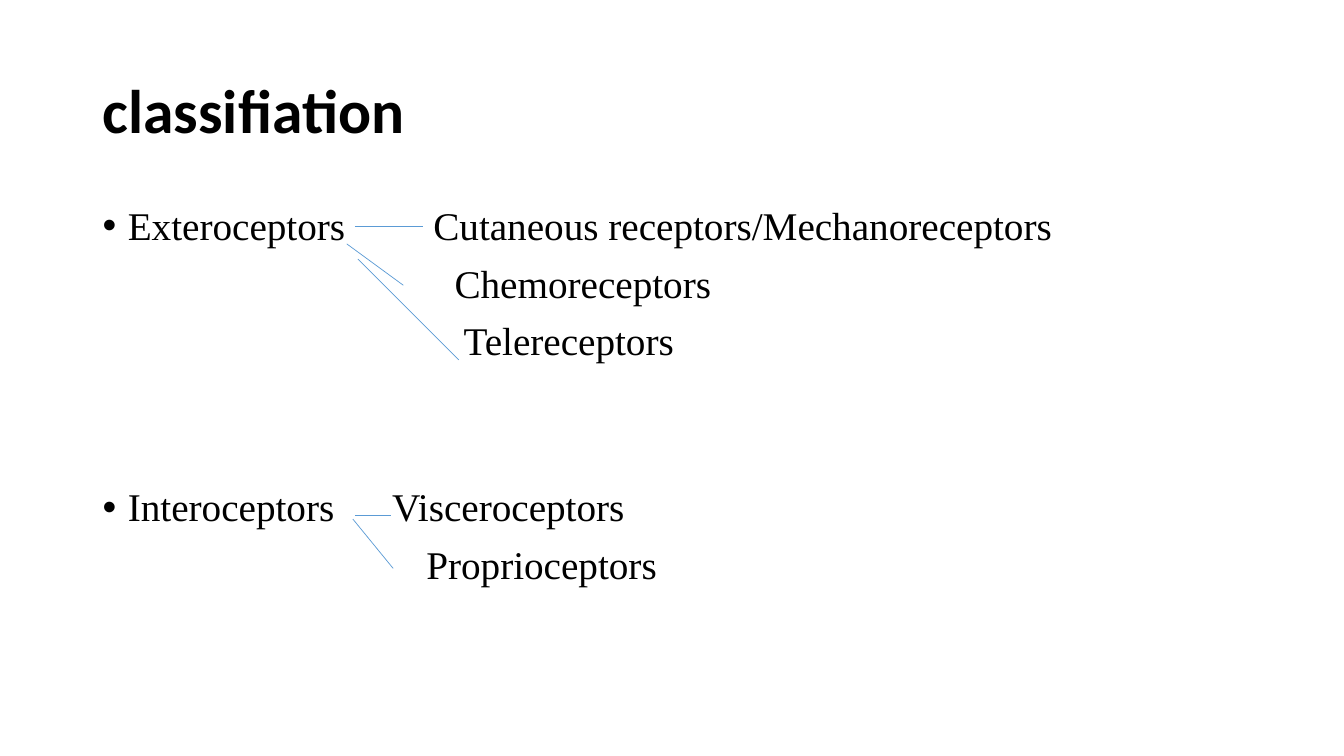
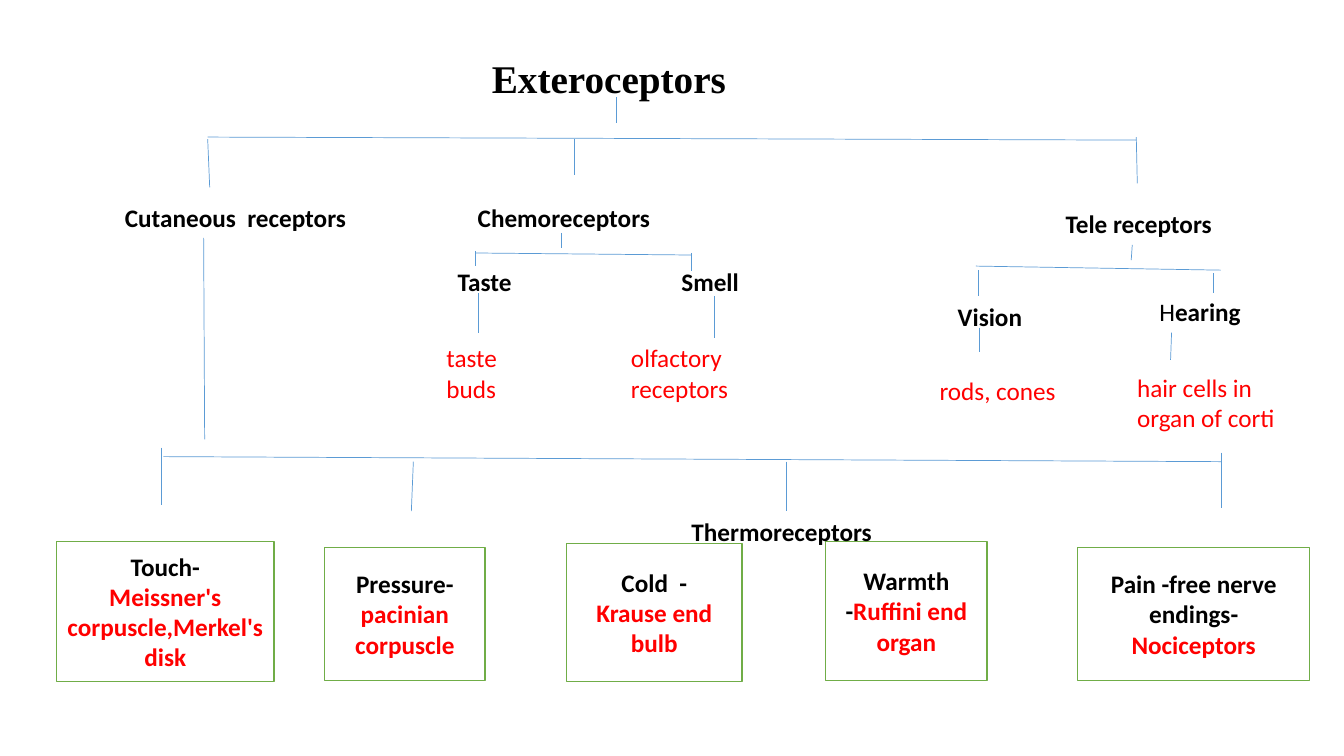
import pptx
import pptx.dml.color
import pptx.enum.shapes
import pptx.enum.text
import pptx.oxml.ns
import pptx.util
import lxml.etree

Inches = pptx.util.Inches
Pt = pptx.util.Pt
PP_ALIGN = pptx.enum.text.PP_ALIGN
ANCHOR = pptx.enum.text.MSO_ANCHOR

COLORS = {
    "text": "000000",
    "organ": "FF0000",
    "branch": "5B9BD5",
    "frame": "70AD47",
    "paper": "FFFFFF",
}
SANS, SERIF = "Calibri", "Times New Roman"
# font, size, bold, colour
STYLES = {
    "title": (SANS, 44, True, "text"),
    "heading": (SERIF, 28, True, "text"),
    "body": (SERIF, 28, False, "text"),
    "label": (SANS, 18, True, "text"),
    "light": (SANS, 18, False, "text"),
    "organ": (SANS, 18, False, "organ"),
    "strong organ": (SANS, 18, True, "organ"),
}


def rgb(color):
    return pptx.dml.color.RGBColor.from_string(COLORS[color])


def add_runs(paragraph, runs):
    """Append (text, style) runs."""
    for text, style in runs:
        run = paragraph.add_run()
        run.text = text
        font = run.font
        font.name, size, font.bold, color = STYLES[style]
        font.size = Pt(size)
        font.color.rgb = rgb(color)


def add_text(slide, left, top, width, height, runs, anchor=ANCHOR.TOP):
    """Place a wrapping text box and return its first paragraph."""
    frame = slide.shapes.add_textbox(
        Inches(left), Inches(top), Inches(width), Inches(height)).text_frame
    frame.word_wrap = True
    frame.vertical_anchor = anchor
    add_runs(frame.paragraphs[0], runs)
    return frame.paragraphs[0]


def indent(paragraph, margin, hanging=0, bullet=None):
    properties = paragraph._p.get_or_add_pPr()
    properties.set("marL", str(Inches(margin)))
    properties.set("indent", str(-Inches(hanging)))
    if bullet:
        for tag, key, value in (("a:buFont", "typeface", "Arial"),
                                ("a:buChar", "char", bullet)):
            lxml.etree.SubElement(
                properties, pptx.oxml.ns.qn(tag)).set(key, value)


def add_lines(slide, left, top, lines):
    """Draw (x1, y1, x2, y2) lines measured from left, top."""
    for x1, y1, x2, y2 in lines:
        line = slide.shapes.add_connector(
            pptx.enum.shapes.MSO_CONNECTOR.STRAIGHT,
            Inches(left + x1), Inches(top + y1),
            Inches(left + x2), Inches(top + y2))
        line.line.color.rgb = rgb("branch")
        line.line.width = Pt(0.5)
        lxml.etree.SubElement(line._element.spPr,
                              pptx.oxml.ns.qn("a:effectLst"))


def receptor_group(slide, left, top, name, kinds, lines):
    """A bulleted name, its kinds as (text, offset) and lines between them."""
    bullet = add_text(slide, left, top, 2.8, 0.6, [(name, "body")])
    indent(bullet, 0.25, 0.25, "•")
    bullet.line_spacing = 0.9

    kinds_left = 2.6
    first = add_text(slide, left + kinds_left, top, 11.5 - kinds_left,
                     0.56 * len(kinds) + 0.1, [])
    frame = first._parent
    for index, (kind, offset) in enumerate(kinds):
        paragraph = frame.add_paragraph() if index else first
        indent(paragraph, offset - kinds_left)
        paragraph.line_spacing = 0.9
        if index:
            paragraph.space_before = Pt(11)
        add_runs(paragraph, [(kind, "body")])
    add_lines(slide, left, top, lines)


def sense_branch(slide, left, top, labels, lines):
    """Labels as (x, y, width, height, runs) and lines, from left, top."""
    add_lines(slide, left, top, lines)
    for x, y, width, height, runs in labels:
        add_text(slide, left + x, top + y, width, height, runs)


def receptor_box(slide, left, top, width, height, paragraphs):
    box = slide.shapes.add_shape(
        pptx.enum.shapes.MSO_SHAPE.RECTANGLE,
        Inches(left), Inches(top), Inches(width), Inches(height))
    box.shadow.inherit = False
    box.fill.solid()
    box.fill.fore_color.rgb = rgb("paper")
    box.line.color.rgb = rgb("frame")
    box.line.width = Pt(1)
    frame = box.text_frame
    frame.word_wrap = True
    frame.vertical_anchor = ANCHOR.MIDDLE
    for index, runs in enumerate(paragraphs):
        paragraph = frame.add_paragraph() if index else frame.paragraphs[0]
        paragraph.alignment = PP_ALIGN.CENTER
        add_runs(paragraph, runs)


def classification_slide(slide):
    left = 0.92
    title = add_text(slide, left, 0.4, 11.5, 1.45,
                     [("classifiation", "title")], ANCHOR.MIDDLE)
    title.line_spacing = 0.9
    receptor_group(
        slide, left, 2, "Exteroceptors",
        [("Cutaneous receptors/Mechanoreceptors", 3.28),
         ("Chemoreceptors", 3.49), ("Telereceptors", 3.58)],
        [(2.6, 0.25, 2.98, 0.25), (2.86, 0.25, 3.28, 0.25),
         (2.52, 0.42, 3.08, 0.83), (2.63, 0.57, 3.63, 1.57)])
    receptor_group(
        slide, left, 4.79, "Interoceptors",
        [("Visceroceptors", 2.87), ("Proprioceptors", 3.21)],
        [(2.6, 0.32, 2.96, 0.32), (2.58, 0.36, 2.98, 0.85)])


def exteroceptors_slide(slide):
    heading = add_text(slide, 4.78, 0.54, 3, 0.56,
                       [("Exteroceptors", "heading")])
    heading.line_spacing = 0.9
    add_lines(slide, 2.06, 0.96, [
        (4.05, 0, 4.05, 0.26), (0, 0.4, 9.21, 0.43), (0, 0.42, 0.02, 0.9),
        (3.64, 0.42, 3.64, 0.78), (9.21, 0.4, 9.22, 0.86)])

    boxes = [
        (0.56, 5.37, 2.16, 1.39,
         [[("Touch-", "label")],
          [("Meissner's corpuscle,Merkel's disk", "strong organ")]]),
        (3.22, 5.43, 1.59, 1.32,
         [[("Pressure-", "label")], [("pacinian corpuscle", "strong organ")]]),
        (5.62, 5.39, 1.74, 1.37,
         [[("Cold  -", "label")], [("Krause end bulb", "strong organ")]]),
        (8.19, 5.37, 1.6, 1.38,
         [[("Warmth -", "label"), ("Ruffini end organ", "strong organ")]]),
        (10.69, 5.43, 2.3, 1.32,
         [[("Pain -free nerve endings- ", "label"),
           ("Nociceptors", "strong organ")]]),
    ]
    for box in boxes:
        receptor_box(slide, *box)

    branch_top = 1.9
    sense_branch(
        slide, 0.5, branch_top,
        [(0.64, 0.06, 2.78, 0.4, [("Cutaneous  receptors", "label")]),
         (6.26, 3.17, 2.92, 0.4, [("Thermoreceptors", "label")])],
        [(1.52, 0.46, 1.53, 2.46), (1.12, 2.63, 11.61, 2.68),
         (1.1, 2.54, 1.1, 3.11), (3.6, 2.68, 3.58, 3.17),
         (7.3, 2.68, 7.3, 3.17), (11.61, 2.59, 11.61, 3.14)])
    sense_branch(
        slide, 4.3, branch_top,
        [(0.34, 0.06, 2.8, 0.4, [("Chemoreceptors", "label")]),
         (0.14, 0.69, 1.8, 0.4, [("Taste", "label")]),
         (2.36, 0.69, 1.3, 0.4, [("Smell", "label")]),
         (0.03, 1.45, 1.21, 0.71, [("taste buds", "organ")]),
         (1.86, 1.45, 1.72, 0.71, [("olfactory receptors", "organ")])],
        [(1.27, 0.41, 1.27, 0.56), (0.42, 0.61, 2.56, 0.63),
         (0.41, 0.59, 0.41, 0.74), (2.56, 0.61, 2.56, 0.79),
         (0.44, 1.01, 0.44, 1.4), (2.79, 1.04, 2.79, 1.45)])
    sense_branch(
        slide, 9.2, branch_top,
        [(1.27, 0.12, 2, 0.4, [("Tele receptors", "label")]),
         (0.2, 1.04, 1.29, 0.4, [("Vision", "label")]),
         (2.2, 0.99, 1.3, 0.4, [("H", "light"), ("earing", "label")]),
         (0.02, 1.77, 1.39, 0.4, [("rods, cones", "organ")]),
         (1.98, 1.74, 1.83, 0.71,
          [("hair cells in organ of corti", "organ")])],
        [(2.03, 0.53, 2.02, 0.68), (0.48, 0.74, 2.91, 0.78),
         (0.5, 0.78, 0.5, 1.04), (2.83, 0.81, 2.83, 1.01),
         (0.51, 1.35, 0.51, 1.59), (2.42, 1.4, 2.41, 1.67)])


def main():
    deck = pptx.Presentation()
    deck.slide_width, deck.slide_height = Inches(13.33), Inches(7.5)
    blank = deck.slide_layouts[6]
    for build in (classification_slide, exteroceptors_slide):
        build(deck.slides.add_slide(blank))
    deck.save("out.pptx")


if __name__ == "__main__":
    main()
